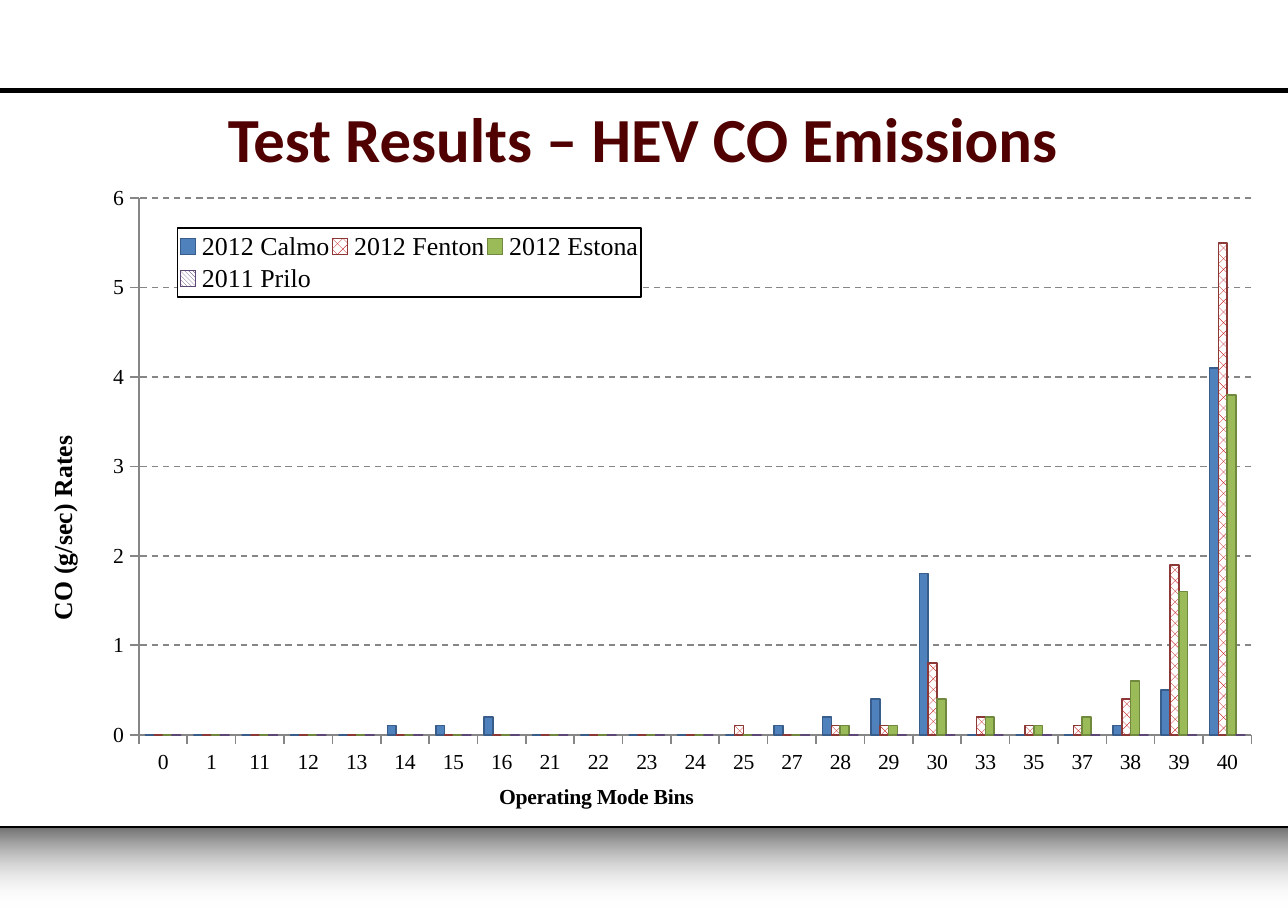
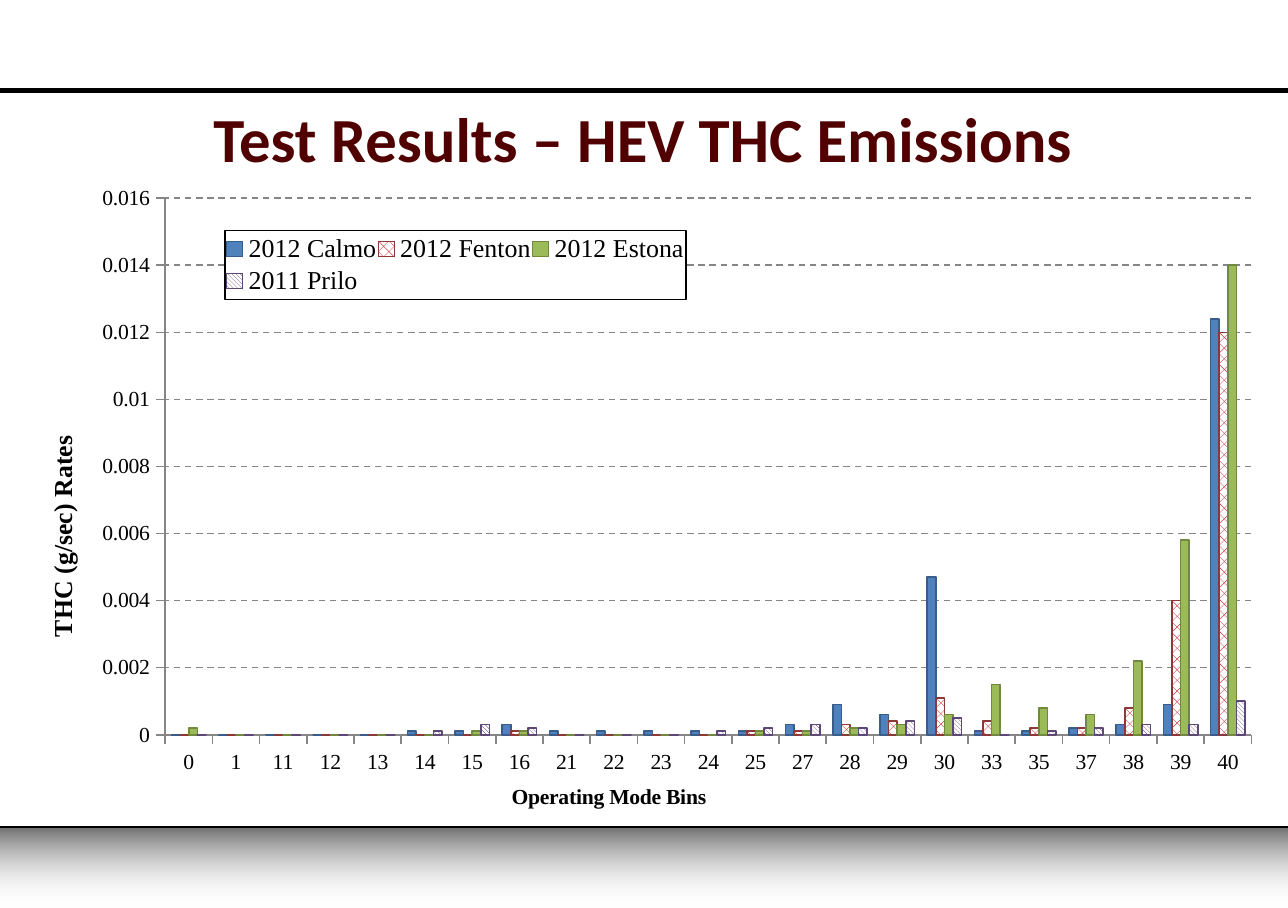
from dataclasses import dataclass

from lxml import etree
from pptx import Presentation
from pptx.chart import data as chart_data
from pptx.dml.color import RGBColor
from pptx.enum import chart as charts, dml, shapes, text
from pptx.oxml import parse_xml
from pptx.oxml import ns
from pptx.util import Inches, Pt


@dataclass(frozen=True)
class Theme:
    title_font: str = "Calibri"
    chart_font: str = "Times New Roman"
    title_size: float = 29
    chart_size: float = 10
    emphasis_size: float = 12
    ink: str = "000000"
    paper: str = "FFFFFF"
    maroon: str = "500000"
    grid: str = "868686"


@dataclass(frozen=True)
class SeriesStyle:
    name: str
    fill: str
    edge: str
    pattern: object = None


@dataclass(frozen=True)
class Emission:
    gas: str
    top: float
    step: float
    plot: tuple
    legend: tuple
    bins_title: tuple
    values: tuple


THEME = Theme()
PAGE_WIDTH, PAGE_HEIGHT = 8.27, 5.83
TITLE_BOX = (0.41, 0.5, 7.44, 0.77)
CHART_BOX = (0.14, 1.16, 8, 4.08)
FOOTER_BOX = (0, 5.31, 8.39, 0.52)
HEADER_RULE = 0.58
RATES_TITLE = (0.016, 0.4)

BINS = (0, 1, *range(11, 17), *range(21, 26), *range(27, 31), 33, 35, *range(37, 41))
CARS = (
    SeriesStyle("2012 Calmo", "4F81BD", "385D8A"),
    SeriesStyle("2012 Fenton", "C00000", "8C3836", dml.MSO_PATTERN.PERCENT_50),
    SeriesStyle("2012 Estona", "9BBB59", "71893F"),
    SeriesStyle("2011 Prilo", "604A7B", "5C4776", dml.MSO_PATTERN.DARK_DOWNWARD_DIAGONAL),
)
EMISSIONS = (
    Emission(
        "CO", 6, 1,
        (0.094, 0.028, 0.893, 0.852), (0.125, 0.075, 0.372, 0.11), (0.38, 0.95),
        (
            (0, 0, 0, 0, 0, 0.1, 0.1, 0.2, 0, 0, 0, 0, 0, 0.1, 0.2, 0.4,
             1.8, 0, 0, 0, 0.1, 0.5, 4.1),
            (0, 0, 0, 0, 0, 0, 0, 0, 0, 0, 0, 0, 0.1, 0, 0.1, 0.1,
             0.8, 0.2, 0.1, 0.1, 0.4, 1.9, 5.5),
            (0, 0, 0, 0, 0, 0, 0, 0, 0, 0, 0, 0, 0, 0, 0.1, 0.1,
             0.4, 0.2, 0.1, 0.2, 0.6, 1.6, 3.8),
            (0,) * len(BINS),
        ),
    ),
    Emission(
        "THC", 0.016, 0.002,
        (0.115, 0.028, 0.872, 0.852), (0.163, 0.079, 0.37, 0.11), (0.39, 0.95),
        (
            (0, 0, 0, 0, 0, 0.0001, 0.0001, 0.0003, 0.0001, 0.0001, 0.0001, 0.0001,
             0.0001, 0.0003, 0.0009, 0.0006, 0.0047, 0.0001, 0.0001, 0.0002, 0.0003,
             0.0009, 0.0124),
            (0, 0, 0, 0, 0, 0, 0, 0.0001, 0, 0, 0, 0, 0.0001, 0.0001, 0.0003, 0.0004,
             0.0011, 0.0004, 0.0002, 0.0002, 0.0008, 0.004, 0.012),
            (0.0002, 0, 0, 0, 0, 0, 0.0001, 0.0001, 0, 0, 0, 0, 0.0001, 0.0001, 0.0002,
             0.0003, 0.0006, 0.0015, 0.0008, 0.0006, 0.0022, 0.0058, 0.014),
            (0, 0, 0, 0, 0, 0.0001, 0.0003, 0.0002, 0, 0, 0, 0.0001, 0.0002, 0.0003,
             0.0002, 0.0004, 0.0005, 0, 0.0001, 0.0002, 0.0003, 0.0003, 0.001),
        ),
    ),
)


def colour(value):
    return RGBColor.from_string(value)


def inches(box):
    return [Inches(length) for length in box]


def style_font(font, name, size, value, bold=False):
    font.name = name
    font.size = Pt(size)
    font.bold = bold
    font.color.rgb = colour(value)


def style_line(line, value, width):
    line.color.rgb = colour(value)
    line.width = Pt(width)


def add_rule(page, height, width):
    rule = page.shapes.add_connector(
        shapes.MSO_CONNECTOR.STRAIGHT, *inches((0, height, PAGE_WIDTH, height)))
    style_line(rule.line, THEME.ink, width)
    properties = rule.element.xpath("p:spPr")[0]
    etree.SubElement(properties, ns.qn("a:effectLst"))
    return rule


def add_footer_band(page, box):
    band = page.shapes.add_shape(shapes.MSO_SHAPE.RECTANGLE, *inches(box))
    band.shadow.inherit = False
    band.line.fill.background()
    band.fill.gradient()
    band.fill.gradient_angle = 90
    for stop, value, opacity in zip(
            band.fill.gradient_stops, (THEME.paper, THEME.ink), (0, 58)):
        stop.color.rgb = colour(value)
    for tint, opacity in zip(band.element.xpath(".//a:gs/a:srgbClr"), (0, 58)):
        etree.SubElement(tint, ns.qn("a:alpha"), val=str(opacity * 1000))
    return band


def prepare_layout(deck):
    layout = deck.slide_layouts.get_by_name("Title Only")
    for other in list(deck.slide_layouts):
        if other.name != layout.name:
            deck.slide_layouts.remove(other)
    across = Inches(PAGE_WIDTH) / deck.slide_width
    down = Inches(PAGE_HEIGHT) / deck.slide_height
    deck.slide_width, deck.slide_height = inches((PAGE_WIDTH, PAGE_HEIGHT))
    for holder in deck.slide_master.placeholders:
        holder.left, holder.width = (
            int(holder.left * across), int(holder.width * across))
        holder.top, holder.height = (
            int(holder.top * down), int(holder.height * down))
    for holder in list(layout.placeholders):
        if holder.placeholder_format.type == shapes.PP_PLACEHOLDER.TITLE:
            holder.left, holder.top, holder.width, holder.height = inches(TITLE_BOX)
        else:
            holder.element.getparent().remove(holder.element)
    return layout


def share_decoration(layout, page):
    parts = (
        add_rule(page, FOOTER_BOX[1], 1),
        add_footer_band(page, FOOTER_BOX),
        add_rule(page, HEADER_RULE, 2.25),
    )
    for position, part in enumerate(parts, start=2):
        layout.shapes.element.insert(position, part.element)


def fill_title(page, wording, box):
    title = page.shapes.title
    title.left, title.top, title.width, title.height = inches(box)
    frame = title.text_frame
    frame.auto_size = text.MSO_AUTO_SIZE.NONE
    frame.vertical_anchor = text.MSO_ANCHOR.MIDDLE
    frame.margin_left = frame.margin_right = Inches(0.08)
    frame.margin_top = frame.margin_bottom = Inches(0.04)
    para = frame.paragraphs[0]
    para.alignment = text.PP_ALIGN.CENTER
    span = para.add_run()
    span.text = wording
    style_font(span.font, THEME.title_font, THEME.title_size, THEME.maroon, True)


def set_layout(chart, target, box, after=None, inner=False):
    parent = chart.element.xpath(target)[0]
    for old in parent.findall(ns.qn("c:layout")):
        parent.remove(old)
    values = [("layoutTarget", "inner")] if inner else []
    values += [("xMode", "edge"), ("yMode", "edge")]
    values += zip("xywh", box)
    settings = "".join(f'<c:{name} val="{value}"/>' for name, value in values)
    layout = parse_xml(
        f'<c:layout {ns.nsdecls("c")}><c:manualLayout>{settings}'
        "</c:manualLayout></c:layout>")
    anchor = parent.find(ns.qn(after)) if after else None
    if anchor is None:
        parent.insert(0, layout)
    else:
        anchor.addnext(layout)


def style_axis(axis, wording, size):
    span = axis.axis_title.text_frame.paragraphs[0].add_run()
    span.text = wording
    style_font(span.font, THEME.chart_font, size, THEME.ink, True)
    axis.major_tick_mark = charts.XL_TICK_MARK.OUTSIDE
    axis.tick_labels.number_format = "General"
    axis.tick_labels.number_format_is_linked = False
    style_line(axis.format.line, THEME.grid, 0.75)


def style_series(series, car):
    fill = series.format.fill
    if car.pattern is None:
        fill.solid()
    else:
        fill.patterned()
        fill.pattern = car.pattern
        fill.back_color.rgb = colour(THEME.paper)
    fill.fore_color.rgb = colour(car.fill)
    series.invert_if_negative = False
    style_line(series.format.line, car.edge, 0.75)


def add_legend(chart, box):
    chart.has_legend = True
    legend = chart.legend
    legend.position = charts.XL_LEGEND_POSITION.RIGHT
    legend.include_in_layout = False
    style_font(legend.font, THEME.chart_font, THEME.emphasis_size, THEME.ink)
    frame = parse_xml(
        f'<c:spPr {ns.nsdecls("c", "a")}>'
        f'<a:solidFill><a:srgbClr val="{THEME.paper}"/></a:solidFill>'
        f'<a:ln w="9525"><a:solidFill><a:srgbClr val="{THEME.ink}"/></a:solidFill></a:ln>'
        "</c:spPr>")
    chart.element.xpath("c:chart/c:legend/c:txPr")[0].addprevious(frame)
    set_layout(chart, "c:chart/c:legend", box, "c:legendPos")


def add_emission_chart(page, emission, box):
    table = chart_data.CategoryChartData()
    table.categories = BINS
    for car, values in zip(CARS, emission.values):
        table.add_series(car.name, values)
    chart = page.shapes.add_chart(
        charts.XL_CHART_TYPE.COLUMN_CLUSTERED, *inches(box), table).chart
    chart.has_title = False
    style_font(chart.font, THEME.chart_font, THEME.chart_size, THEME.ink)
    plot = chart.plots[0]
    plot.gap_width = 150
    plot.overlap = 0
    plot.vary_by_categories = False
    for series, car in zip(plot.series, CARS):
        style_series(series, car)
    style_axis(chart.category_axis, "Operating Mode Bins", THEME.chart_size)
    rates = chart.value_axis
    style_axis(rates, f"{emission.gas} (g/sec) Rates", THEME.emphasis_size)
    rates.minimum_scale = 0
    rates.maximum_scale = emission.top
    rates.major_unit = emission.step
    rates.has_major_gridlines = True
    style_line(rates.major_gridlines.format.line, THEME.grid, 0.75)
    rates.major_gridlines.format.line.dash_style = dml.MSO_LINE.DASH
    add_legend(chart, emission.legend)
    set_layout(chart, "c:chart/c:plotArea", emission.plot, inner=True)
    set_layout(chart, ".//c:catAx/c:title", emission.bins_title, "c:tx")
    set_layout(chart, ".//c:valAx/c:title", RATES_TITLE, "c:tx")


def add_emission_page(deck, layout, emission):
    page = deck.slides.add_slide(layout)
    fill_title(page, f"Test Results – HEV {emission.gas} Emissions", TITLE_BOX)
    add_emission_chart(page, emission, CHART_BOX)
    return page


def main():
    deck = Presentation()
    layout = prepare_layout(deck)
    pages = [add_emission_page(deck, layout, emission) for emission in EMISSIONS]
    share_decoration(layout, pages[0])
    deck.save("out.pptx")


if __name__ == "__main__":
    main()
